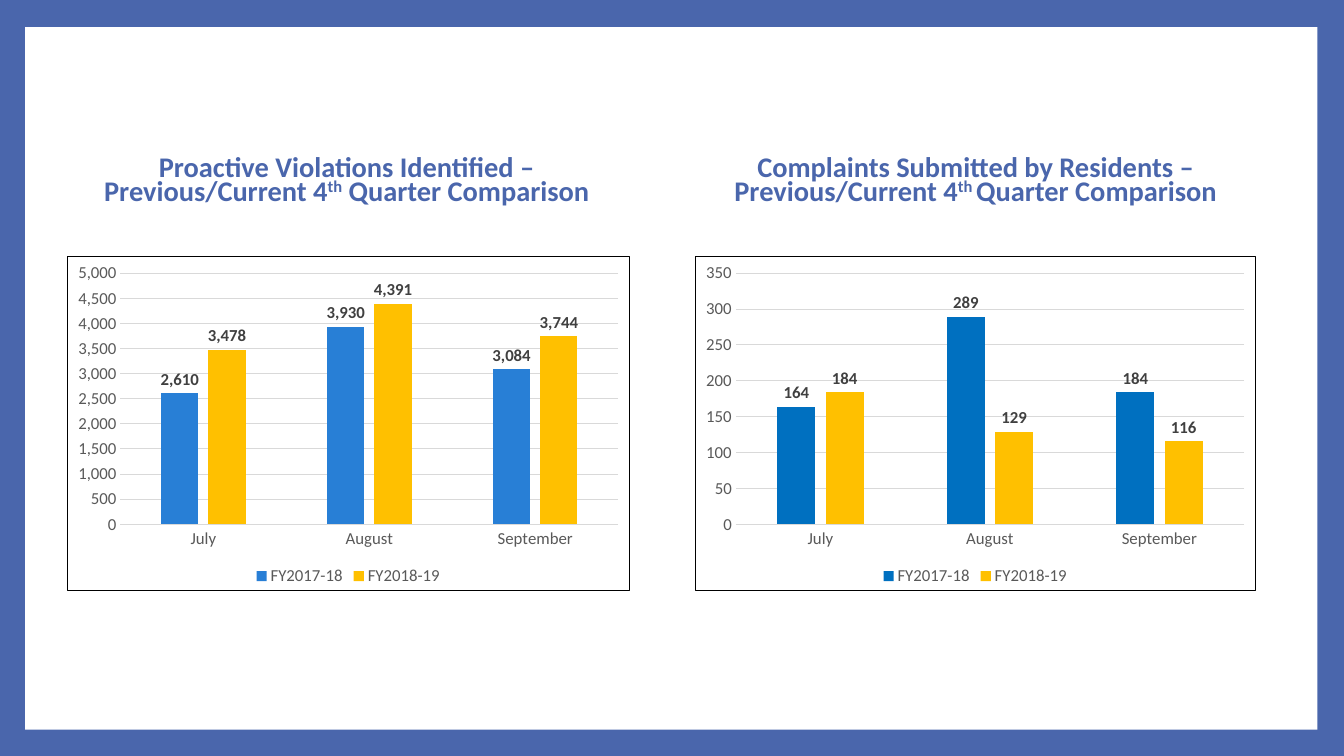
from dataclasses import dataclass

from lxml.etree import SubElement
from pptx import Presentation
from pptx.chart.chart import Chart
from pptx.chart.data import CategoryChartData
from pptx.dml.color import RGBColor
from pptx.enum.chart import XL_CHART_TYPE as ChartType
from pptx.enum.chart import XL_LABEL_POSITION as LabelPosition
from pptx.enum.chart import XL_LEGEND_POSITION as LegendPosition
from pptx.enum.chart import XL_TICK_MARK as TickMark
from pptx.enum.shapes import MSO_SHAPE as ShapeKind
from pptx.enum.text import MSO_ANCHOR as Anchor
from pptx.enum.text import MSO_AUTO_SIZE as AutoSize
from pptx.enum.text import PP_ALIGN as Align
from pptx.oxml import parse_xml
from pptx.oxml.ns import nsdecls, qn
from pptx.slide import Slide
from pptx.util import Pt

COLORS = {
    "frame": "4A66AC",
    "panel": "FFFFFF",
    "border": "000000",
    "grid": "D9D9D9",
    "axis_text": "595959",
    "label_text": "404040",
    "bright_blue": "287FD6",
    "deep_blue": "0070C0",
    "gold": "FFC000",
}
FONT = "Calibri"
MONTHS = ("July", "August", "September")
YEARS = ("FY2017-18", "FY2018-19")
HEADING_TOP, HEADING_HEIGHT = 97.9, 64.8
CHART_TOP, CHART_HEIGHT = 182.9, 239


@dataclass(frozen=True)
class Comparison:
    placeholder: int
    heading: tuple[str, str, str]
    heading_left: float
    heading_width: float
    chart_left: float
    chart_width: float
    counts: tuple[tuple[int, ...], ...]
    bar_colors: tuple[str, str]
    number_format: str


COMPARISONS = (
    Comparison(
        1,
        ("Proactive Violations Identified – Previous/Current 4", "th", " Quarter Comparison"),
        55.4, 384.5, 47.5, 402.5,
        ((2610, 3930, 3084), (3478, 4391, 3744)),
        ("bright_blue", "gold"), "#,##0",
    ),
    Comparison(
        3,
        ("Complaints Submitted by Residents – Previous/Current 4", "th ", "Quarter Comparison"),
        505.4, 383, 496.1, 401,
        ((164, 289, 184), (184, 129, 116)),
        ("deep_blue", "gold"), "General",
    ),
)


def rgb(name: str) -> RGBColor:
    return RGBColor.from_string(COLORS[name])


def set_values(target: object, values: dict) -> None:
    for name, value in values.items():
        setattr(target, name, value)


def style_font(font, size: float, color: str, bold: bool = False) -> None:
    set_values(font, {"name": FONT, "size": Pt(size), "bold": bold})
    font.color.rgb = rgb(color)


def style_line(line, color: str) -> None:
    line.color.rgb = rgb(color)
    line.width = Pt(0.75)


def add_panel(slide: Slide) -> None:
    panel = slide.shapes.add_shape(
        ShapeKind.RECTANGLE, Pt(18), Pt(19.4), Pt(923), Pt(501.9))
    panel.shadow.inherit = False
    panel.fill.solid()
    panel.fill.fore_color.rgb = rgb("panel")
    panel.line.fill.background()
    slide.shapes._spTree.insert(2, panel._element)  # behind the placeholders


def fill_heading(slide: Slide, item: Comparison) -> None:
    box = next(shape for shape in slide.placeholders
               if shape.placeholder_format.idx == item.placeholder)
    set_values(box, {"left": Pt(item.heading_left), "top": Pt(HEADING_TOP),
                     "width": Pt(item.heading_width), "height": Pt(HEADING_HEIGHT)})
    set_values(box.text_frame, {"word_wrap": True, "auto_size": AutoSize.NONE,
                                "vertical_anchor": Anchor.MIDDLE})
    para = box.text_frame.paragraphs[0]
    set_values(para, {"alignment": Align.CENTER, "line_spacing": 0.7,
                      "space_before": Pt(0)})
    for position, text in enumerate(item.heading):
        span = para.add_run()
        span.text = text
        style_font(span.font, 20.3, "frame", bold=True)
        if position == 1:
            span._r.get_or_add_rPr().set("baseline", "30000")


def add_chart_border(chart: Chart) -> None:
    properties = parse_xml(f"<c:spPr {nsdecls('c', 'a')}><a:noFill/></c:spPr>")
    line = SubElement(properties, qn("a:ln"), w=str(Pt(0.75)))
    fill = SubElement(line, qn("a:solidFill"))
    SubElement(fill, qn("a:srgbClr"), val=COLORS["border"])
    chart._chartSpace.find(qn("c:chart")).addnext(properties)


def style_axes(chart: Chart, number_format: str) -> None:
    for axis in (chart.category_axis, chart.value_axis):
        set_values(axis, {"major_tick_mark": TickMark.NONE,
                          "minor_tick_mark": TickMark.NONE})
        style_font(axis.tick_labels.font, 12, "axis_text")
    style_line(chart.category_axis.format.line, "grid")
    values = chart.value_axis
    values.format.line.fill.background()
    style_line(values.major_gridlines.format.line, "grid")
    set_values(values.tick_labels, {"number_format": number_format,
                                    "number_format_is_linked": False})


def add_comparison_chart(slide: Slide, item: Comparison) -> None:
    data = CategoryChartData(number_format=item.number_format)
    data.categories = MONTHS
    for year, counts in zip(YEARS, item.counts):
        data.add_series(year, counts)
    chart = slide.shapes.add_chart(
        ChartType.COLUMN_CLUSTERED, Pt(item.chart_left), Pt(CHART_TOP),
        Pt(item.chart_width), Pt(CHART_HEIGHT), data).chart
    set_values(chart, {"has_title": False, "has_legend": True})
    style_font(chart.font, 10, "border")
    add_chart_border(chart)
    set_values(chart.legend, {"position": LegendPosition.BOTTOM,
                              "include_in_layout": False})
    style_font(chart.legend.font, 12, "axis_text")
    style_axes(chart, item.number_format)

    plot = chart.plots[0]
    set_values(plot, {"gap_width": 219, "overlap": -27, "vary_by_categories": False})
    for series, color in zip(plot.series, item.bar_colors):
        series.format.fill.solid()
        series.format.fill.fore_color.rgb = rgb(color)
        labels = series.data_labels
        set_values(labels, {"show_value": True, "position": LabelPosition.OUTSIDE_END,
                            "number_format": item.number_format,
                            "number_format_is_linked": False})
        style_font(labels.font, 12, "label_text", bold=True)


def main() -> None:
    deck = Presentation()
    set_values(deck, {"slide_width": Pt(960), "slide_height": Pt(540)})
    page = deck.slides.add_slide(deck.slide_layouts.get_by_name("Comparison"))
    page.background.fill.solid()
    page.background.fill.fore_color.rgb = rgb("frame")
    add_panel(page)
    for item in COMPARISONS:
        fill_heading(page, item)
        add_comparison_chart(page, item)
    for box in list(page.placeholders):
        if not box.text_frame.text:
            box._element.getparent().remove(box._element)
    deck.save("out.pptx")


if __name__ == "__main__":
    main()
